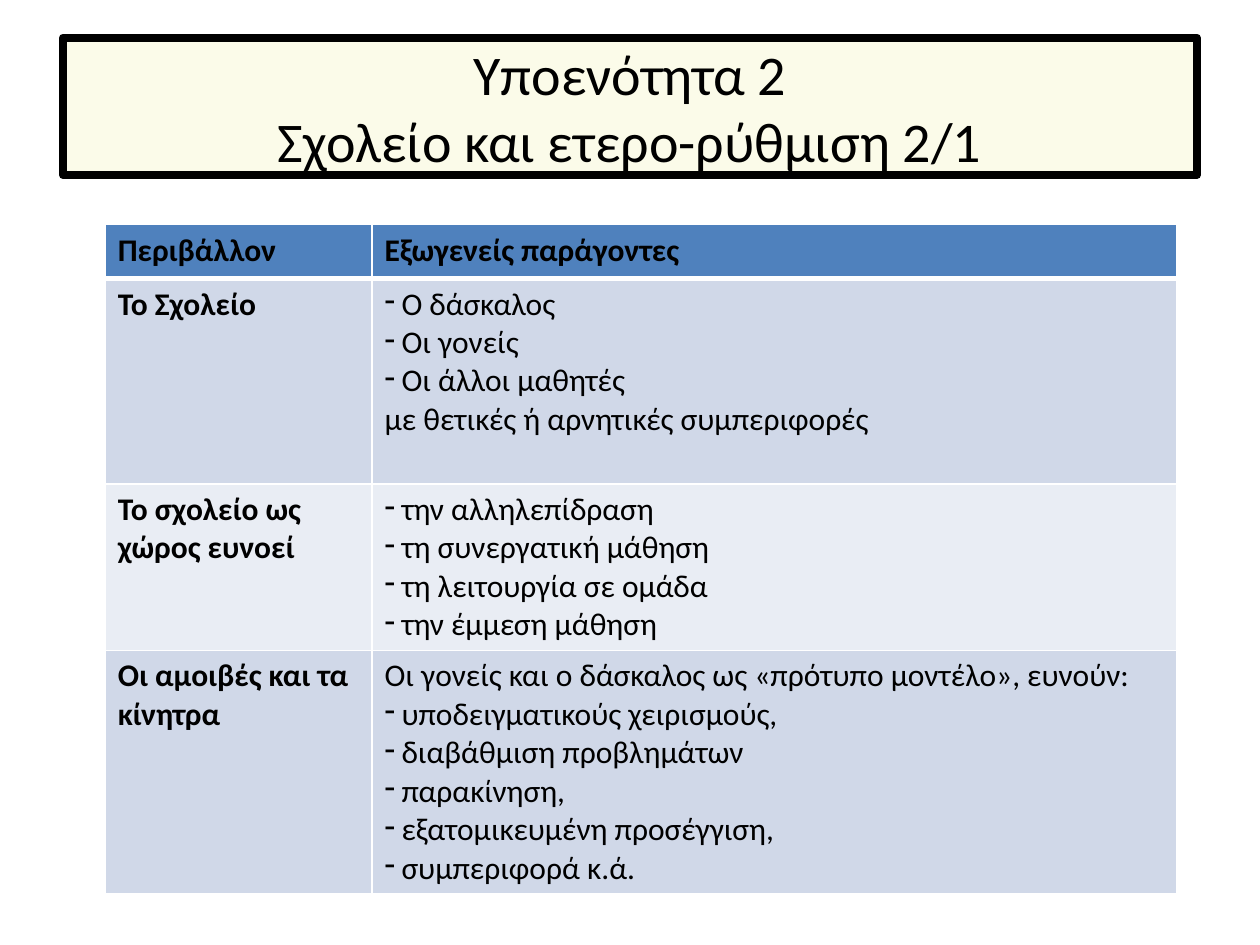
from dataclasses import dataclass

from lxml.etree import SubElement
from pptx import Presentation
from pptx.dml.color import RGBColor
from pptx.enum.shapes import MSO_SHAPE
from pptx.enum.text import MSO_ANCHOR, PP_ALIGN
from pptx.oxml.ns import qn
from pptx.util import Cm, Pt


@dataclass(frozen=True)
class Theme:
    """Colours, font and type sizes of the slide."""

    font: str = "Calibri"
    text: str = "000000"
    title_fill: str = "FBFBE9"
    header_fill: str = "4F81BD"
    band_fills: tuple = ("D0D8E8", "E9EDF4")
    border: str = "FFFFFF"
    title_size: int = 32
    table_size: int = 18


THEME = Theme()
TITLE = ("Υποενότητα 2", "Σχολείο και ετερο-ρύθμιση 2/1")
HEADER = ("Περιβάλλον", "Εξωγενείς παράγοντες")
ROWS = (
    ("Το Σχολείο",
     ("- Ο δάσκαλος", "- Οι γονείς", "- Οι άλλοι μαθητές",
      "με θετικές ή αρνητικές συμπεριφορές")),
    ("Το σχολείο ως χώρος ευνοεί",
     ("- την αλληλεπίδραση", "- τη συνεργατική μάθηση",
      "- τη λειτουργία σε ομάδα", "- την έμμεση μάθηση")),
    ("Οι αμοιβές και τα κίνητρα",
     ("Οι γονείς και ο δάσκαλος ως «πρότυπο μοντέλο», ευνούν:",
      "- υποδειγματικούς χειρισμούς,", "- διαβάθμιση προβλημάτων",
      "- παρακίνηση,", "- εξατομικευμένη προσέγγιση,",
      "- συμπεριφορά κ.ά.")),
)
COLUMN_WIDTHS = (Cm(5.38), Cm(16.22))
ROW_HEIGHTS = (Cm(1.09), Cm(4.14), Cm(3.35), Cm(4.88))


def colour(value):
    """Turn a hex string into a colour."""
    return RGBColor.from_string(value)


def add_span(para, text, size, bold=False):
    """Add one styled run to a paragraph."""
    span = para.add_run()
    span.text = text
    span.font.name = THEME.font
    span.font.size = Pt(size)
    span.font.bold = bold
    span.font.color.rgb = colour(THEME.text)


def add_dash(para):
    """Give a paragraph a hanging dash bullet."""
    properties = para._p.get_or_add_pPr()
    properties.set("marL", str(Cm(0.34)))
    properties.set("indent", str(-Cm(0.34)))
    SubElement(properties, qn("a:buChar"), char="-")


def add_title(page, lines):
    """Add the framed title with one line per entry."""
    box = page.shapes.add_shape(
        MSO_SHAPE.RECTANGLE, Cm(1.27), Cm(0.76), Cm(22.86), Cm(2.77))
    box.shadow.inherit = False
    box.fill.solid()
    box.fill.fore_color.rgb = colour(THEME.title_fill)
    box.line.color.rgb = colour(THEME.text)
    box.line.width = Pt(4.5)
    box.text_frame.word_wrap = True
    box.text_frame.vertical_anchor = MSO_ANCHOR.MIDDLE
    para = box.text_frame.paragraphs[0]
    para.alignment = PP_ALIGN.CENTER
    for index, line in enumerate(lines):
        if index:
            para.add_line_break()
        add_span(para, line, THEME.title_size)


def set_borders(cell, top, bottom):
    """Draw the four cell borders, with widths in points."""
    properties = cell._tc.get_or_add_tcPr()
    for side, width in (("L", 1), ("R", 1), ("T", top), ("B", bottom)):
        line = SubElement(properties, qn(f"a:ln{side}"), w=str(Pt(width)))
        fill = SubElement(line, qn("a:solidFill"))
        SubElement(fill, qn("a:srgbClr"), val=THEME.border)


def fill_cell(cell, lines, fill, bold):
    """Colour a cell and write its lines, a leading dash making a bullet."""
    cell.fill.solid()
    cell.fill.fore_color.rgb = colour(fill)
    frame = cell.text_frame
    for index, line in enumerate(lines):
        para = frame.add_paragraph() if index else frame.paragraphs[0]
        if line.startswith("- "):
            add_dash(para)
        add_span(para, line.removeprefix("- "), THEME.table_size, bold)


def add_factor_table(page):
    """Add the table of environments and external factors."""
    table = page.shapes.add_table(
        len(ROW_HEIGHTS), len(COLUMN_WIDTHS), Cm(2.12), Cm(4.53),
        sum(COLUMN_WIDTHS), sum(ROW_HEIGHTS)).table
    for column, width in zip(table.columns, COLUMN_WIDTHS):
        column.width = width
    content = [tuple((label,) for label in HEADER)]
    content += [((label,), factors) for label, factors in ROWS]
    for row_index, (row, height) in enumerate(zip(table.rows, ROW_HEIGHTS)):
        row.height = height
        is_header = row_index == 0
        fill = THEME.header_fill if is_header else THEME.band_fills[(row_index - 1) % 2]
        for column_index, cell in enumerate(row.cells):
            set_borders(cell, 3 if row_index == 1 else 1, 3 if is_header else 1)
            fill_cell(cell, content[row_index][column_index], fill,
                      is_header or column_index == 0)


def main():
    """Build and save the slide."""
    deck = Presentation()
    deck.slide_width, deck.slide_height = Cm(25.4), Cm(19.05)
    page = deck.slides.add_slide(deck.slide_layouts[6])
    add_title(page, TITLE)
    add_factor_table(page)
    deck.save("out.pptx")


if __name__ == "__main__":
    main()
